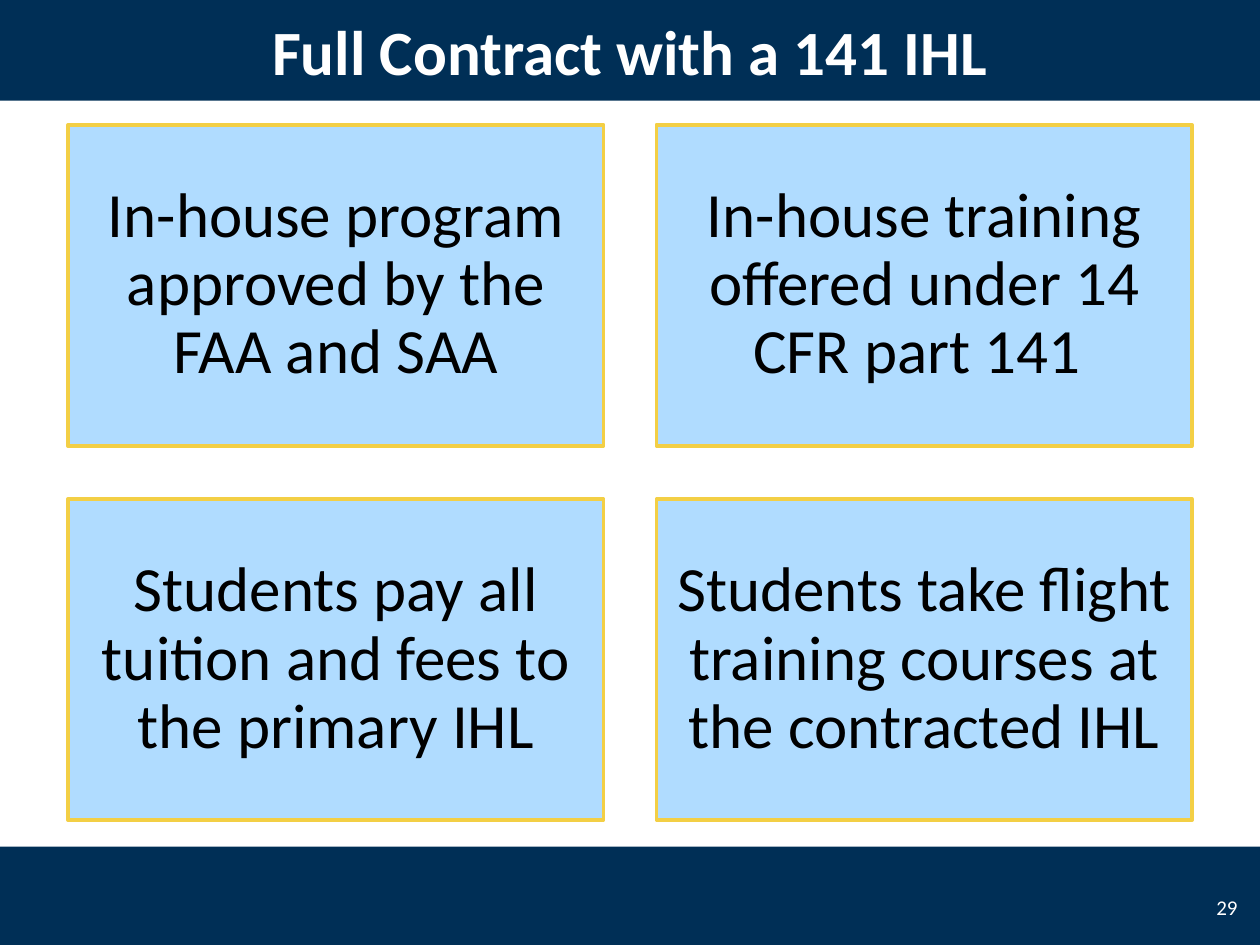
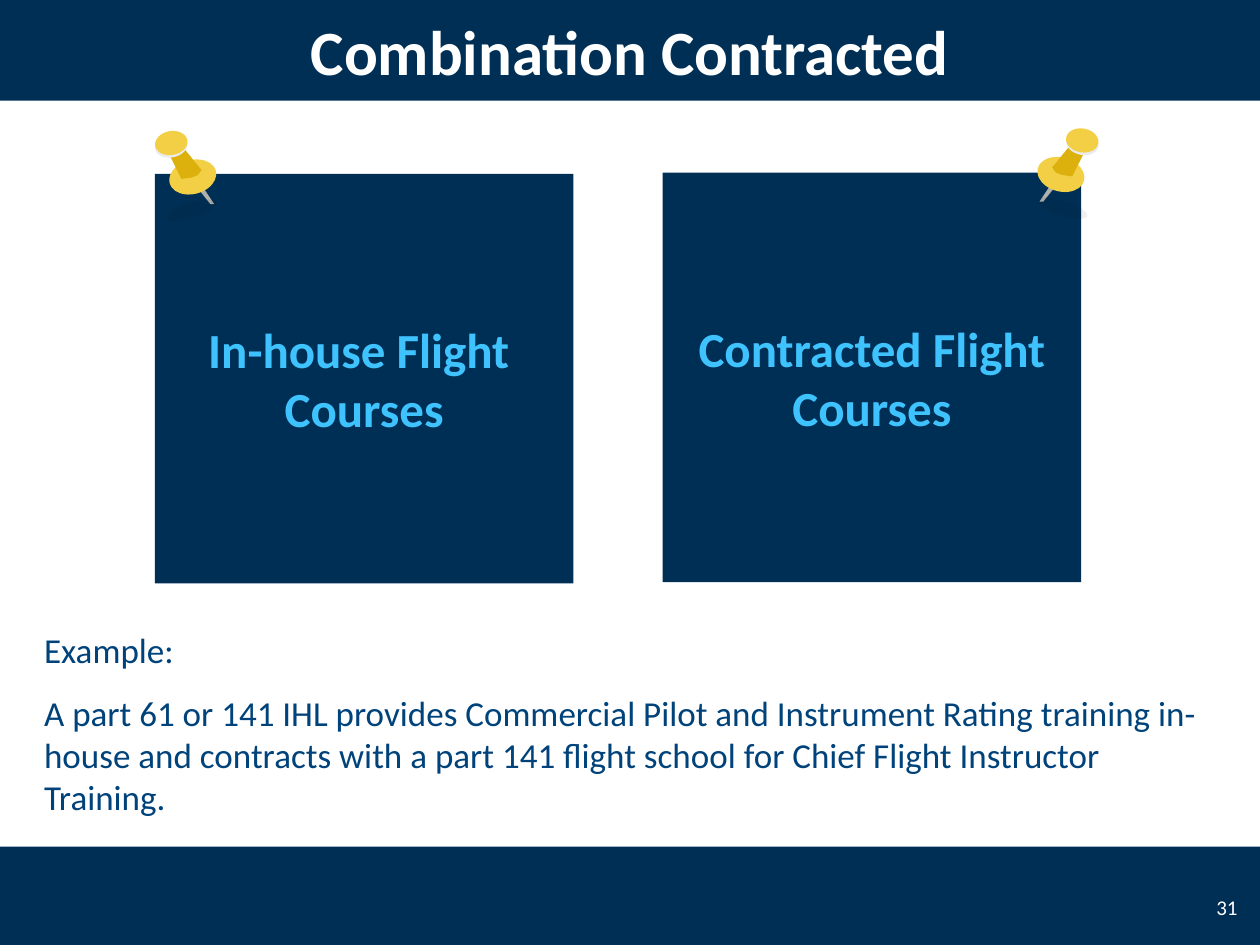
"""Build two slides on contracted flight training."""
from dataclasses import dataclass
from lxml.etree import SubElement
from pptx import Presentation
from pptx.dml.color import RGBColor as Rgb
from pptx.enum.shapes import MSO_SHAPE as Kind
from pptx.enum.text import MSO_ANCHOR as Anchor, PP_ALIGN as Align
from pptx.oxml.ns import qn
from pptx.util import Pt

PX = 9144


@dataclass(frozen=True)
class Theme:
    navy: str = "002F56"
    sky: str = "B0DCFF"
    gold: str = "F3CF45"
    dark: str = "DCB10E"
    rim: str = "EAEBEB"
    steel: str = "B0B0AC"
    aqua: str = "3FC3FF"
    blue: str = "00427A"
    white: str = "FFFFFF"
    black: str = "000000"
    face: str = "Calibri"
    head: int = 36
    note: int = 28
    body: int = 20
    page: int = 12


T = Theme()


def paint(shape, fill, edge=None):
    shape.shadow.inherit = False
    shape.fill.solid()
    shape.fill.fore_color.rgb = Rgb.from_string(fill)
    if edge:
        shape.line.color.rgb = Rgb.from_string(edge)
        shape.line.width = Pt(2)
    else:
        shape.line.fill.background()
    return shape


def write(shape, lines, size, color, bold=False, align=Align.CENTER,
          pad=(10, 5), **form):
    frame = shape.text_frame
    side, rise = (n * PX for n in pad)
    look = dict(word_wrap=True, vertical_anchor=Anchor.MIDDLE, margin_left=side,
                margin_right=side, margin_top=rise, margin_bottom=rise)
    for key, val in look.items():
        setattr(frame, key, val)
    for i, line in enumerate(lines):
        para = frame.add_paragraph() if i else frame.paragraphs[0]
        for key, val in dict(form, alignment=align).items():
            setattr(para, key, val)
        run = para.add_run()
        run.text = line
        for key, val in dict(name=T.face, size=Pt(size), bold=bold).items():
            setattr(run.font, key, val)
        run.font.color.rgb = Rgb.from_string(color)


deck = Presentation()
deck.slide_width, deck.slide_height = 1000 * PX, 750 * PX

pages = []
for title, number in (("Full Contract with a 141 IHL", "29"),
                      ("Combination Contracted", "31")):
    page = deck.slides.add_slide(deck.slide_layouts[6]).shapes
    for top, tall in ((672, 78), (0, 80)):
        paint(page.add_shape(Kind.RECTANGLE, 0, top * PX, 1000 * PX, tall * PX), T.navy)
    box = page.add_textbox(950 * PX, 700 * PX, 42 * PX, 40 * PX)
    write(box, [number], T.page, T.white, align=Align.RIGHT)
    box = page.add_textbox(50 * PX, 0, 900 * PX, 80 * PX)
    write(box, [title], T.head, T.white, bold=True)
    pages.append(page)
full, mixed = pages

cards = ("In-house program approved by the FAA and SAA",
         "In-house training offered under 14 CFR part 141 ",
         "Students pay all tuition and fees to the primary IHL",
         "Students take flight training courses at the contracted IHL")
for i, text in enumerate(cards):
    row, col = divmod(i, 2)
    card = full.add_shape(Kind.RECTANGLE, (54 + 467 * col) * PX,
                          (99 + 297 * row) * PX, 425 * PX, 255 * PX)
    write(paint(card, T.sky, T.gold), [text], T.head, T.black,
          pad=(15, 15), line_spacing=0.9)

notes = ((526, 137, ["Contracted Flight Courses"]),
         (123, 138, ["In-house Flight ", "Courses"]))
for left, top, lines in notes:
    note = mixed.add_shape(Kind.RECTANGLE, left * PX, top * PX, 332 * PX, 325 * PX)
    write(paint(note, T.navy), lines, T.note, T.aqua, bold=True, pad=(14, 14))

needle = (T.steel, [(162, 150), (170, 162), (167, 162), (159, 152)])
neck = (T.dark, [(147, 119), (160, 135), (157, 139), (152, 141), (144, 142), (135, 124)])
shade = (T.black, (131, 161, 42, 12), -18)
plate = (T.gold, (134, 127, 38, 27), -15)
rim = (T.rim, (123, 107, 26, 18), -12)
knob = (T.gold, (123, 104, 26, 19), -10)
for flip, rise in ((True, -2), (False, 0)):
    pin = mixed.add_group_shape().shapes
    for part in (needle, shade, plate, neck, rim, knob):
        if len(part) == 2:
            fill, dots = part
            dots = [(995 - x if flip else x, y + rise) for x, y in dots]
            pen = pin.build_freeform(*dots[0], scale=PX)
            pen.add_line_segments(dots[1:])
            paint(pen.convert_to_shape(), fill)
            continue
        fill, (x, y, wide, tall), turn = part
        left = 995 - x - wide if flip else x
        oval = paint(pin.add_shape(Kind.OVAL, left * PX, (y + rise) * PX,
                                   wide * PX, tall * PX), fill)
        oval.rotation = -turn if flip else turn
        if part is shade:
            tint = oval.fill._xPr.find(qn("a:solidFill"))[0]
            SubElement(tint, qn("a:alpha"), val="6000")

box = mixed.add_textbox(35 * PX, 473 * PX, 929 * PX, 201 * PX)
write(box, ["Example:",
            "A part 61 or 141 IHL provides Commercial Pilot and Instrument Rating "
            "training in-house and contracts with a part 141 flight school for "
            "Chief Flight Instructor Training."],
      T.body, T.blue, align=Align.LEFT, pad=(0, 0), space_after=Pt(12))

deck.save("out.pptx")
